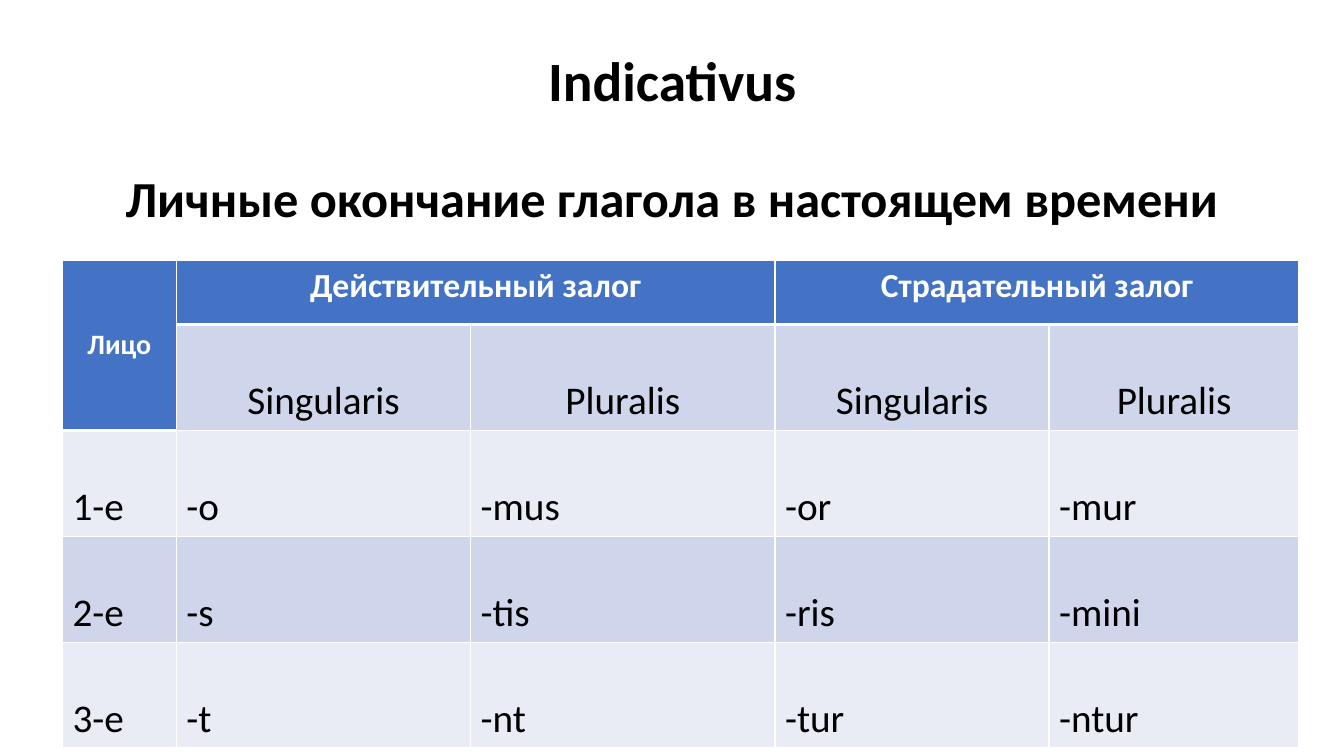
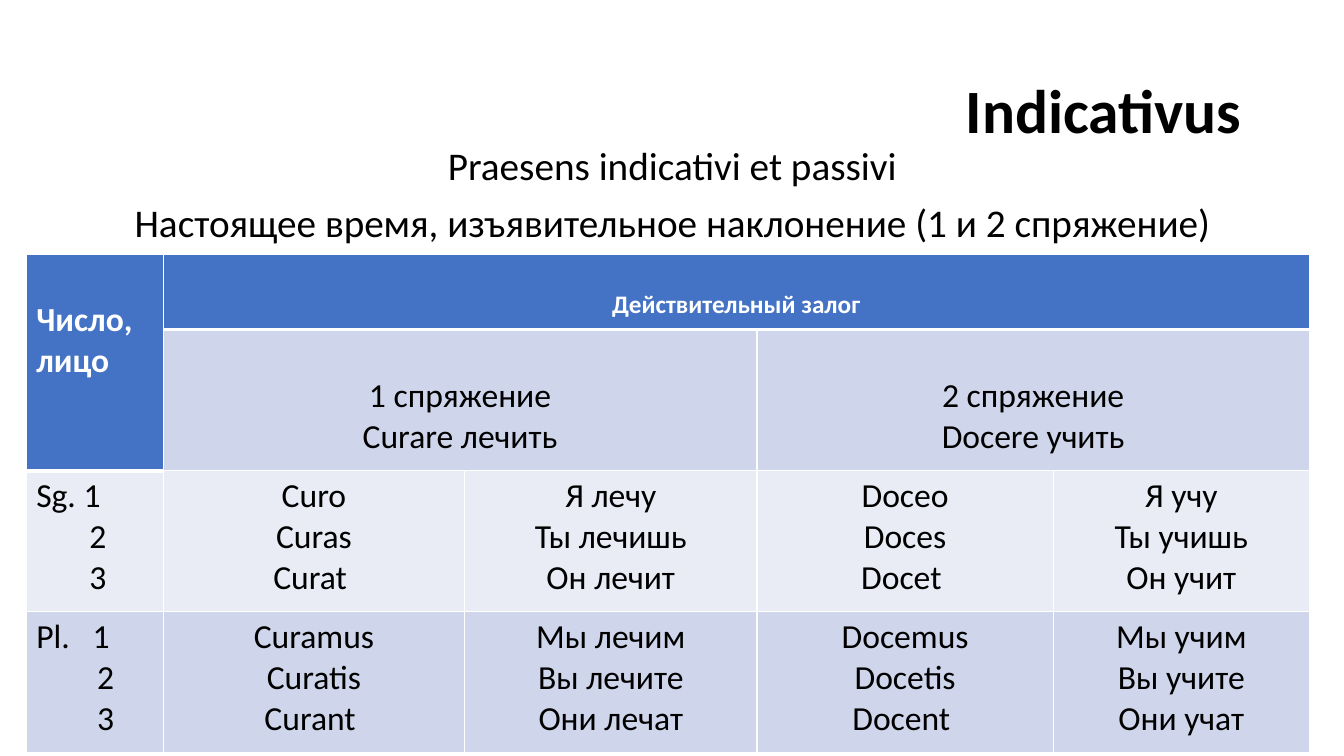
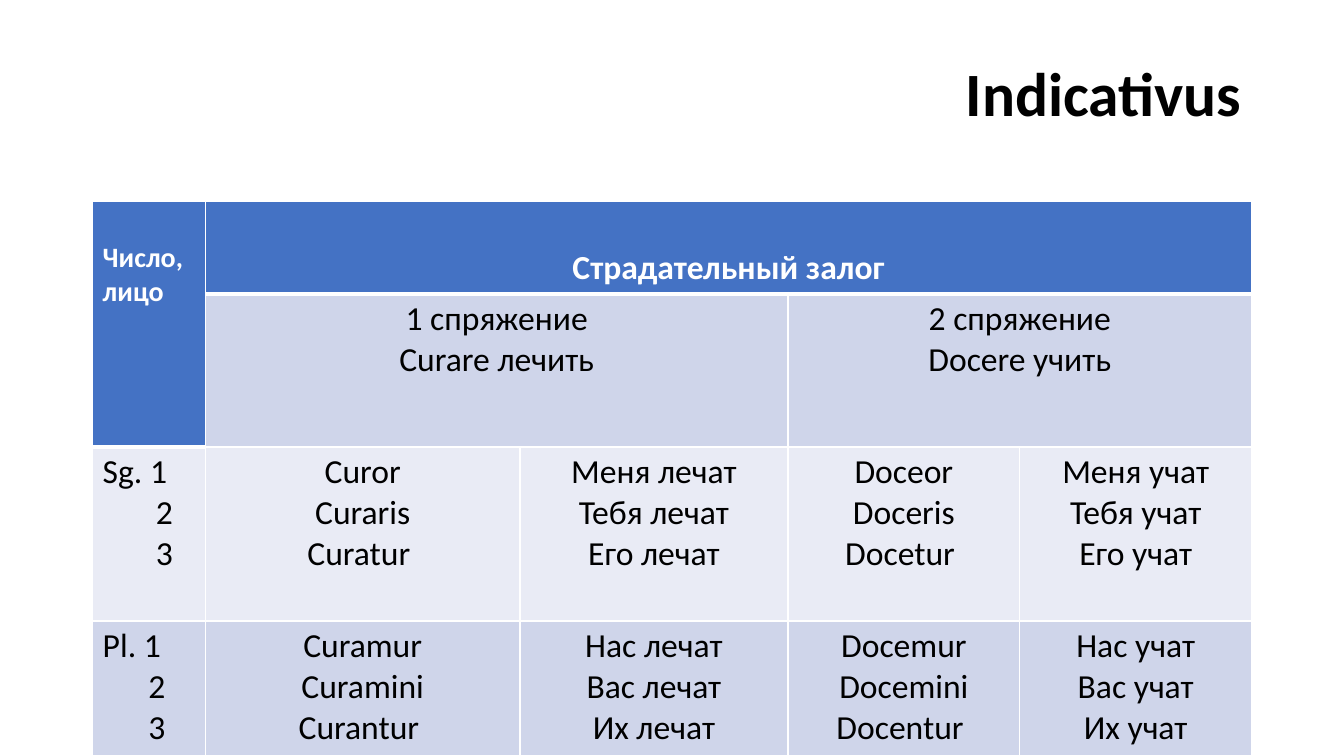
from lxml import etree
from pptx import Presentation
from pptx.dml.color import RGBColor
from pptx.enum.text import MSO_ANCHOR, MSO_AUTO_SIZE, PP_ALIGN
from pptx.oxml.ns import qn
from pptx.util import Pt

LEFT, CENTER, RIGHT = PP_ALIGN.LEFT, PP_ALIGN.CENTER, PP_ALIGN.RIGHT
TOP, MIDDLE = MSO_ANCHOR.TOP, MSO_ANCHOR.MIDDLE
NO_AUTOFIT = MSO_AUTO_SIZE.NONE
TITLE_ONLY = 5

COLORS = {
    "text": "000000",
    "header": "4472C4",
    "header_text": "FFFFFF",
    "band_dark": "CFD5EA",
    "band_light": "E9EBF5",
    "border": "FFFFFF",
}
FONT = "Calibri"
CONTENT_LEFT, CONTENT_WIDTH = 66.2, 828
THIN, THICK = 1, 3
CELL_INSET = 3.6


def write(paragraph, text, size=24, color="text", bold=False, align=LEFT,
          spacing=None, before=0, indent=0, tab=0):
    properties = paragraph._p.get_or_add_pPr()
    if indent:
        properties.set("marL", str(Pt(indent)))
    if tab:
        stops = etree.SubElement(properties, qn("a:tabLst"))
        etree.SubElement(stops, qn("a:tab"), pos=str(Pt(tab)), algn="l")
    paragraph.alignment = align
    paragraph.space_before = Pt(before)
    if spacing:
        paragraph.line_spacing = spacing
    run = paragraph.add_run()
    run.text = text
    run.font.name = FONT
    run.font.size = Pt(size)
    run.font.bold = bold
    run.font.color.rgb = RGBColor.from_string(COLORS[color])


def write_lines(frame, text, before=0, indent=0, **style):
    first, *others = text.split("\n")
    write(frame.paragraphs[0], first, **style)
    for line in others:
        write(frame.add_paragraph(), line, before=before, indent=indent, **style)


def add_titled_slide(deck, top, height=104.4, size=44, align=RIGHT):
    slide = deck.slides.add_slide(deck.slide_layouts[TITLE_ONLY])
    title = slide.shapes.title
    title.left, title.top = Pt(CONTENT_LEFT), Pt(top)
    title.width, title.height = Pt(CONTENT_WIDTH), Pt(height)
    frame = title.text_frame
    frame.auto_size = NO_AUTOFIT
    frame.word_wrap = True
    frame.vertical_anchor = MIDDLE
    write(frame.paragraphs[0], "Indicativus", size=size, bold=True,
          align=align, spacing=0.9)
    return slide


def add_subtitle(slide, text):
    box = slide.shapes.add_textbox(Pt(CONTENT_LEFT), Pt(101.5),
                                   Pt(CONTENT_WIDTH), Pt(79))
    box.text_frame.word_wrap = True
    write_lines(box.text_frame, text, before=10, size=28, align=CENTER, spacing=0.9)


def ends_header(row, column):
    return row == (1 if column == 0 else 0)


def in_header(row, column):
    return row == 0 or ends_header(row, column)


def set_borders(cell, top, bottom):
    properties = cell._tc.get_or_add_tcPr()
    for side, weight in (("L", THIN), ("R", THIN), ("T", top), ("B", bottom)):
        line = etree.SubElement(properties, qn(f"a:ln{side}"), w=str(Pt(weight)))
        fill = etree.SubElement(line, qn("a:solidFill"))
        etree.SubElement(fill, qn("a:srgbClr"), val=COLORS["border"])


def add_grid(slide, left, top, widths, heights):
    table = slide.shapes.add_table(len(heights), len(widths), Pt(left), Pt(top),
                                   Pt(sum(widths)), Pt(sum(heights))).table
    for column, width in zip(table.columns, widths):
        column.width = Pt(width)
    for row, height in zip(table.rows, heights):
        row.height = Pt(height)
    for row in range(len(heights)):
        for column in range(len(widths)):
            cell = table.cell(row, column)
            set_borders(cell,
                        THICK if ends_header(row - 1, column) else THIN,
                        THICK if ends_header(row, column) else THIN)
            band = "band_dark" if row % 2 else "band_light"
            cell.fill.solid()
            cell.fill.fore_color.rgb = RGBColor.from_string(
                COLORS["header" if in_header(row, column) else band])
    return table


def fill_cell(table, row, column, text, rows=1, columns=1, drop=0,
              anchor=TOP, **style):
    cell = table.cell(row, column)
    if rows * columns > 1:
        cell.merge(table.cell(row + rows - 1, column + columns - 1))
    cell.margin_top = Pt(CELL_INSET + drop)
    cell.vertical_anchor = anchor
    header = in_header(row, column)
    write_lines(cell.text_frame, text, bold=header,
                color="header_text" if header else "text", **style)


def add_endings_slide(deck):
    slide = add_titled_slide(deck, top=28.8, height=144, size=39.6, align=CENTER)
    write(slide.shapes.title.text_frame.add_paragraph(),
          "Личные окончание глагола в настоящем времени", size=36, bold=True,
          align=CENTER, spacing=0.9, before=43.5)
    table = add_grid(slide, 44.6, 185.8, [81.4, 210.2, 217.4, 195.8, 178.6],
                     [46] + [75.6] * 4)
    fill_cell(table, 0, 0, "Лицо", rows=2, size=20, align=CENTER, anchor=MIDDLE)
    for column, voice in ((1, "Действительный залог"), (3, "Страдательный залог")):
        fill_cell(table, 0, column, voice, columns=2, align=CENTER)
    endings = [
        ["Singularis", "Pluralis"] * 2,
        ["1-е", "-о", "-mus", "-or", "-mur"],
        ["2-е", "-s", "-tis", "-ris", "-mini"],
        ["3-е", "-t", "-nt", "-tur", "-ntur"],
    ]
    for row, entries in enumerate(endings, 1):
        for column, ending in enumerate(entries, 5 - len(entries)):
            fill_cell(table, row, column, ending, size=28, drop=34.2,
                      align=CENTER if row == 1 else LEFT)


def fill_conjugations(table, voice, voice_size, voice_drop, corner_size,
                      corner_drop, models, models_drop, persons, forms):
    fill_cell(table, 0, 0, "Число,\nлицо", rows=2, size=corner_size, drop=corner_drop)
    fill_cell(table, 0, 1, voice, columns=4, size=voice_size, drop=voice_drop,
              align=CENTER)
    for column, model in zip((1, 3), models):
        fill_cell(table, 1, column, model, columns=2, drop=models_drop, align=CENTER)
    for row, (person, verbs) in enumerate(zip(persons, forms), 2):
        label, indent, tab = person
        fill_cell(table, row, 0, label, indent=indent, tab=tab)
        for column, verb in enumerate(verbs, 1):
            fill_cell(table, row, column, verb, align=CENTER)


def add_active_slide(deck):
    slide = add_titled_slide(deck, top=28.8)
    add_subtitle(slide, "Praesens indicativi et passivi\n"
                 "Настоящее время, изъявительное наклонение (1 и 2 спряжение)")
    table = add_grid(slide, 18.7, 181.4, [97.9, 215.3, 208.8, 211.7, 182.9],
                     [54] + [100.8] * 3)
    fill_conjugations(
        table, "Действительный залог", voice_size=18, voice_drop=22,
        corner_size=24, corner_drop=29.3,
        models=["1 cпряжение\nCurare лечить", "2 спряжение\nDocere учить"],
        models_drop=29.3,
        persons=[("Sg. 1\n2\n3", 38, 0), ("Pl.\t1\n2\n3", 43.4, 40.2)],
        forms=[
            ["Curo\nCuras\nCurat ", "Я лечу\nТы лечишь\nОн лечит",
             "Doceo\nDoces\nDocet ", "Я учу\nТы учишь\nОн учит"],
            ["Curamus\nCuratis\nCurant ", "Мы лечим\nВы лечите\nОни лечат",
             "Docemus\nDocetis\nDocent ", "Мы учим\nВы учите\nОни учат"],
        ])


def add_passive_slide(deck):
    slide = add_titled_slide(deck, top=16.6)
    table = add_grid(slide, CONTENT_LEFT, 144, [80.6, 224.6, 191.5, 165.6, 165.6],
                     [65.8, 109.5, 124.3, 96.4])
    fill_conjugations(
        table, "Страдательный залог", voice_size=24, voice_drop=29.3,
        corner_size=20, corner_drop=24.4,
        models=["1 спряжение\nCurare лечить", "2 спряжение\nDocere учить"],
        models_drop=0,
        persons=[("Sg. 1\n2\n3", 38, 0), ("Pl. 1\n2\n3", 32.5, 0)],
        forms=[
            ["Curor\nCuraris\nCuratur ", "Меня лечат\nТебя лечат\nЕго лечат",
             "Doceor\nDoceris\nDocetur ", "Меня учат\nТебя учат\nЕго учат"],
            ["Curamur\nCuramini\nCurantur ", "Нас лечат\nВас лечат\nИх лечат",
             "Docemur\nDocemini\nDocentur ", "Нас учат\nВас учат\nИх учат"],
        ])


def main():
    deck = Presentation()
    deck.slide_width, deck.slide_height = Pt(960), Pt(540)
    add_endings_slide(deck)
    add_active_slide(deck)
    add_passive_slide(deck)
    deck.save("out.pptx")


if __name__ == "__main__":
    main()
